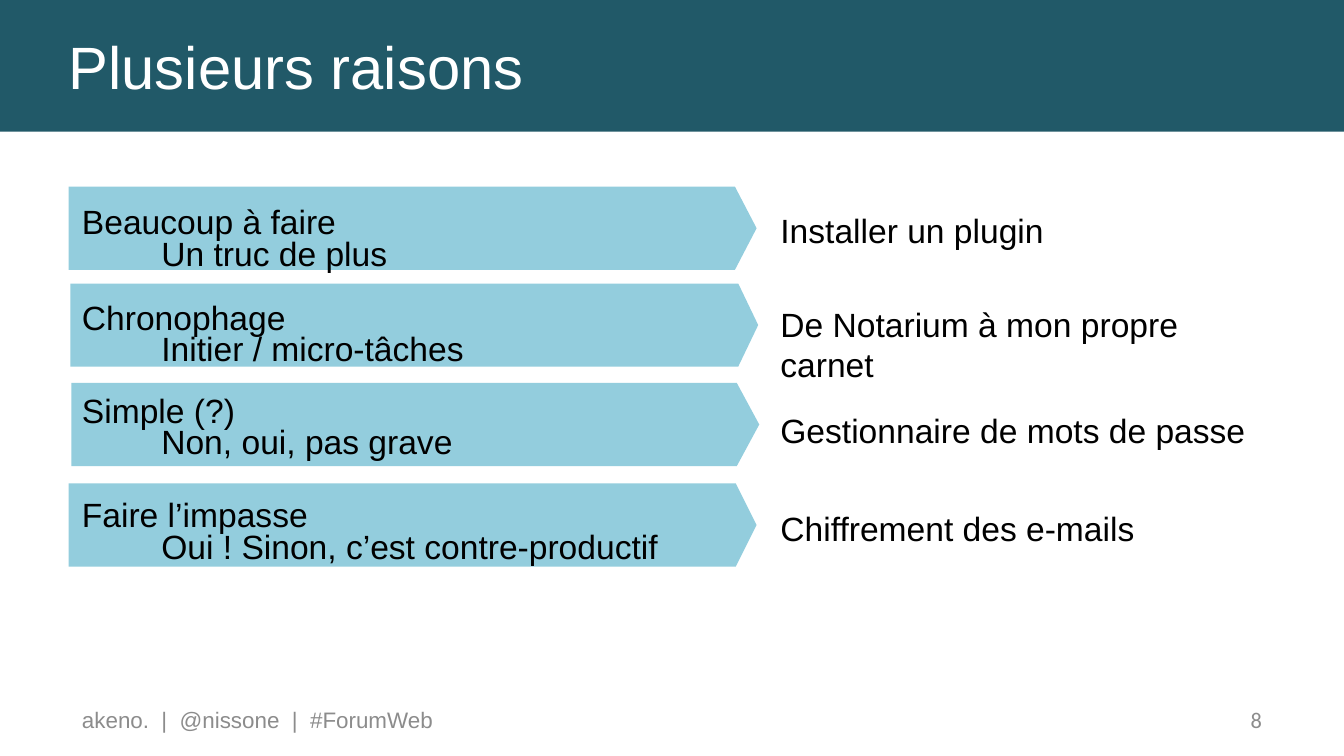
from dataclasses import dataclass

from pptx import Presentation
from pptx.dml.color import RGBColor
from pptx.enum.shapes import MSO_SHAPE
from pptx.enum.text import MSO_ANCHOR, PP_ALIGN
from pptx.util import Cm, Pt


@dataclass(frozen=True)
class Theme:
    banner: RGBColor = RGBColor(0x21, 0x59, 0x68)
    arrow: RGBColor = RGBColor(0x93, 0xCD, 0xDD)
    title_text: RGBColor = RGBColor(0xFF, 0xFF, 0xFF)
    body_text: RGBColor = RGBColor(0, 0, 0)
    footer_text: RGBColor = RGBColor(0x8C, 0x8C, 0x8C)
    title_size: Pt = Pt(32)
    body_size: Pt = Pt(18)
    footer_size: Pt = Pt(12)
    font: str = "Arial"
    number_font: str = "Calibri"


@dataclass(frozen=True)
class Reason:
    """A row's wording, with its own placement in centimetres."""
    heading: str
    detail: str
    answer: str
    top: float
    indent: float
    point: float
    heading_drop: float
    answer_drop: float


THEME = Theme()
MARGIN = 1.3
REASONS = [
    Reason("Beaucoup à faire", "Un truc de plus", "Installer un plugin",
           3.53, 0, 0.26, 0.15, 0.31),
    Reason("Chronophage", "Initier / micro-tâches", "De Notarium à mon propre carnet",
           5.36, 0.03, 0.24, 0.12, 0.26),
    Reason("Simple (?)", "Non, oui, pas grave", "Gestionnaire de mots de passe",
           7.24, 0.05, 0.27, 0, 0.38),
    Reason("Faire l’impasse", "Oui ! Sinon, c’est contre-productif", "Chiffrement des e-mails",
           9.14, 0, 0.25, 0.08, 0.33),
]


def write(shape, text, size, color, font=THEME.font,
          align=PP_ALIGN.LEFT, anchor=MSO_ANCHOR.TOP):
    frame = shape.text_frame
    frame.word_wrap = True
    frame.vertical_anchor = anchor
    paragraph = frame.paragraphs[0]
    paragraph.text = text
    paragraph.alignment = align
    paragraph.font.name = font
    paragraph.font.size = size
    paragraph.font.color.rgb = color


def add_label(slide, box, text, size=THEME.body_size, color=THEME.body_text, **style):
    label = slide.shapes.add_textbox(*map(Cm, box))
    write(label, text, size, color, **style)


def add_block(slide, preset, box, color):
    block = slide.shapes.add_shape(preset, *map(Cm, box))
    block.shadow.inherit = False
    block.fill.solid()
    block.fill.fore_color.rgb = color
    block.line.fill.background()
    return block


def add_banner(slide, box, title):
    banner = add_block(slide, MSO_SHAPE.RECTANGLE, box, THEME.banner)
    banner.text_frame.margin_left = Cm(MARGIN)
    write(banner, title, THEME.title_size, THEME.title_text, anchor=MSO_ANCHOR.MIDDLE)


def add_reason(slide, box, reason):
    """Place an arrow with its two lines on the left, and the answer on the right."""
    left, top, width, height = box
    arrow_width, answer_left, detail_indent = 13, 13.2, 1.5
    arrow = add_block(slide, MSO_SHAPE.PENTAGON,
                      (left + reason.indent, top, arrow_width, height), THEME.arrow)
    arrow.adjustments[0] = reason.point

    heading_top = top + reason.heading_drop
    add_label(slide, (left, heading_top, 7.8, 1.02), reason.heading)
    add_label(slide, (left + detail_indent, heading_top + 0.6, 11.7, 1.02), reason.detail)
    add_label(slide, (left + answer_left, top + reason.answer_drop,
                      width - answer_left, 0.9), reason.answer)


def add_footer(slide, box, credit, number):
    left, top, width, height = box
    number_width = 2.8
    style = dict(size=THEME.footer_size, color=THEME.footer_text, anchor=MSO_ANCHOR.MIDDLE)
    add_label(slide, (left, top, 19.6, height), credit, **style)
    add_label(slide, (left + width - number_width, top, number_width, height), number,
              font=THEME.number_font, align=PP_ALIGN.RIGHT, **style)


def main():
    deck = Presentation()
    deck.slide_width, deck.slide_height = Cm(25.4), Cm(14.29)
    slide = deck.slides.add_slide(deck.slide_layouts[6])
    add_banner(slide, (0, 0, 25.4, 2.49), "Plusieurs raisons")
    for reason in REASONS:
        add_reason(slide, (MARGIN, reason.top, 23.1, 1.57), reason)
    add_footer(slide, (MARGIN, 13.23, 22.8, 0.76), "akeno.  |  @nissone  |  #ForumWeb", "8")
    deck.save("out.pptx")


if __name__ == "__main__":
    main()
